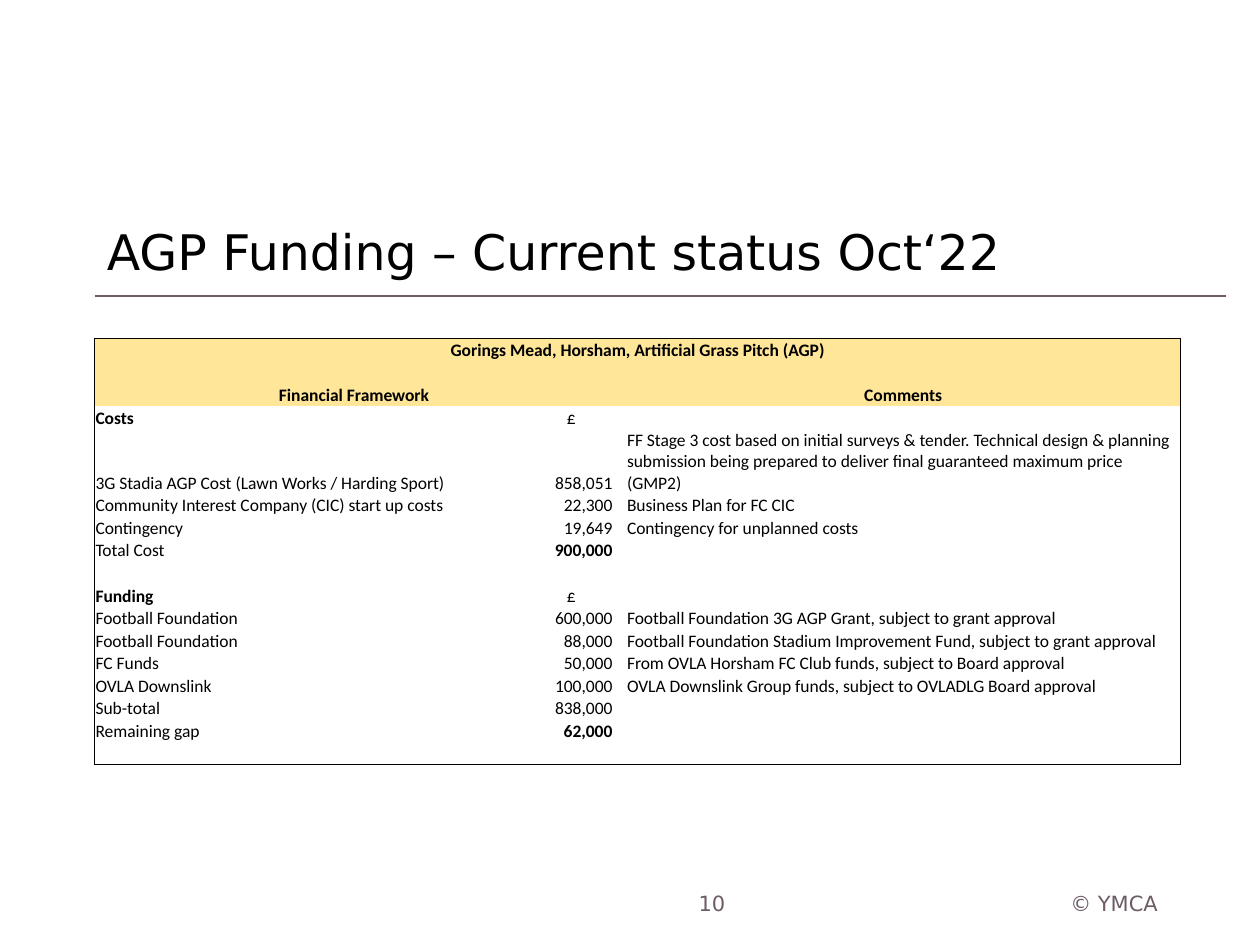
"""Build the AGP funding status slide with its costs and funding table."""
from lxml import etree
from pptx import Presentation
from pptx.dml.color import RGBColor
from pptx.enum.shapes import MSO_CONNECTOR
from pptx.enum.text import MSO_ANCHOR, PP_ALIGN
from pptx.oxml.ns import qn
from pptx.util import Pt

LEFT, CENTER, RIGHT = PP_ALIGN.LEFT, PP_ALIGN.CENTER, PP_ALIGN.RIGHT
MIDDLE, BOTTOM = MSO_ANCHOR.MIDDLE, MSO_ANCHOR.BOTTOM
STRAIGHT = MSO_CONNECTOR.STRAIGHT
COLORS = {"ink": "000000", "muted": "6D5C66", "header": "FFE699"}
NO_GRID_STYLE = "{2D5ABB26-0587-4C30-8999-92F81FD0307C}"

TITLE = "AGP Funding – Current status Oct‘22"
HEADING = "Gorings Mead, Horsham, Artificial Grass Pitch (AGP)"
FRAMEWORK, COMMENTS = "Financial Framework", "Comments"
ROWS = [
    ("Costs", "£", ""),
    ("3G Stadia AGP Cost (Lawn Works / Harding Sport)", "858,051",
     "FF Stage 3 cost based on initial surveys & tender. Technical design & planning "
     "submission being prepared to deliver final guaranteed maximum price (GMP2)"),
    ("Community Interest Company (CIC) start up costs", "22,300", "Business Plan for FC CIC"),
    ("Contingency", "19,649", "Contingency for unplanned costs"),
    ("Total Cost", "900,000", ""),
    ("", "", ""),
    ("Funding", "£", ""),
    ("Football Foundation", "600,000",
     "Football Foundation 3G AGP Grant, subject to grant approval"),
    ("Football Foundation", "88,000",
     "Football Foundation Stadium Improvement Fund, subject to grant approval"),
    ("FC Funds", "50,000", "From OVLA Horsham FC Club funds, subject to Board approval"),
    ("OVLA Downslink", "100,000",
     "OVLA Downslink Group funds, subject to OVLADLG Board approval"),
    ("Sub-total", "838,000", ""),
    ("Remaining gap", "62,000", ""),
    ("", "", ""),
]
SPANS = {"3G Stadia AGP Cost (Lawn Works / Harding Sport)": 5,
         "Community Interest Company (CIC) start up costs": 5,
         "Football Foundation": 3, "Contingency": 2, "Total Cost": 2,
         "OVLA Downslink": 2, "Remaining gap": 2}
BOLD = {"Costs", "Funding", "900,000", "62,000"}
COLS = [41.4] * 6 + [48.2, 7.2, 316.8]
AMOUNT, COMMENT = 6, 8
HEADER_ROWS, ROW_H, TALL_ROW, TALL_H = 3, 12.9, 4, 37.2
X, TABLE_Y, RULE_Y = 54, 193.4, 169.2


def rgb(name):
    return RGBColor.from_string(COLORS[name])


def write(p, text, font, size, color, align=LEFT, bold=False):
    p.add_run().text = text
    p.alignment = align
    p.font.name, p.font.size, p.font.bold = font, Pt(size), bold
    p.font.color.rgb = rgb(color)


def add_text(s, text, box, size, color, align, right_inset=7.2):
    tf = s.shapes.add_textbox(*map(Pt, box)).text_frame
    tf.word_wrap = True
    tf.vertical_anchor = MIDDLE
    tf.margin_right = Pt(right_inset)
    write(tf.paragraphs[0], text, "DejaVu Sans", size, color, align)


def add_borders(cell, sides):
    tc_pr = cell._tc.get_or_add_tcPr()
    for i, side in enumerate(sides):
        ln = etree.Element(qn(f"a:ln{side}"), w=str(Pt(0.5)))
        fill = etree.SubElement(ln, qn("a:solidFill"))
        etree.SubElement(fill, qn("a:srgbClr"), val=COLORS["ink"])
        tc_pr.insert(i, ln)


def fill_cell(cell, text, align=LEFT, bold=False):
    write(cell.text_frame.paragraphs[0], text, "Calibri", 10, "ink", align, bold)


def add_funding_table(s):
    n_rows, n_cols = HEADER_ROWS + len(ROWS), len(COLS)
    heights = [TALL_H if r == TALL_ROW else ROW_H for r in range(n_rows)]
    frame = s.shapes.add_table(n_rows, n_cols, Pt(X), Pt(TABLE_Y),
                               Pt(sum(COLS)), Pt(sum(heights)))
    table = frame.table
    table.first_row = table.horz_banding = False
    table._tbl.tblPr.find(qn("a:tableStyleId")).text = NO_GRID_STYLE
    for col, width in zip(table.columns, COLS):
        col.width = Pt(width)
    for row, height in zip(table.rows, heights):
        row.height = Pt(height)

    texts = {(0, 0): (HEADING, CENTER, True), (1, 0): (FRAMEWORK, CENTER, True),
             (2, COMMENT): (COMMENTS, CENTER, True)}
    for r, (label, amount, comment) in enumerate(ROWS, HEADER_ROWS):
        texts[r, 0] = label, LEFT, label in BOLD
        texts[r, AMOUNT] = amount, CENTER if amount == "£" else RIGHT, amount in BOLD
        texts[r, COMMENT] = comment, LEFT, False
        if label in SPANS:
            table.cell(r, 0).merge(table.cell(r, SPANS[label] - 1))
    table.cell(0, 0).merge(table.cell(0, COMMENT))
    table.cell(1, 0).merge(table.cell(2, AMOUNT))

    for r in range(n_rows):
        for c in range(n_cols):
            cell = table.cell(r, c)
            cell.margin_left = cell.margin_right = cell.margin_top = Pt(0.6)
            cell.margin_bottom = 0
            cell.vertical_anchor = BOTTOM
            if r < HEADER_ROWS:
                cell.fill.solid()
                cell.fill.fore_color.rgb = rgb("header")
            else:
                cell.fill.background()
            edges = {"L": c == 0, "R": c == n_cols - 1 or r == 0,
                     "T": r == 0, "B": r == n_rows - 1}
            add_borders(cell, [side for side, on in edges.items() if on])
            text, align, bold = texts.get((r, c), ("", LEFT, False))
            if text:
                fill_cell(cell, text, align, bold)
            else:
                p = cell.text_frame.paragraphs[0]
                etree.SubElement(p._p, qn("a:endParaRPr"), sz="1000")


def main():
    prs = Presentation()
    prs.slide_width, prs.slide_height = Pt(720), Pt(540)
    s = prs.slides.add_slide(prs.slide_layouts[6])
    rule = s.shapes.add_connector(STRAIGHT, Pt(X), Pt(RULE_Y), Pt(700.6), Pt(RULE_Y))
    rule.line.color.rgb = rgb("muted")
    rule.line.width = Pt(1)
    etree.SubElement(rule._element.spPr, qn("a:effectLst"))
    add_text(s, "© YMCA", (558, 501.8, 103.7, 28.8), 12, "muted", RIGHT, 0)
    add_text(s, TITLE, (X, 103.7, 621.4, 79.2), 28, "ink", LEFT)
    add_text(s, "10", (383.8, 501.8, 46, 28.8), 12, "muted", CENTER)
    add_funding_table(s)
    prs.save("out.pptx")


if __name__ == "__main__":
    main()
